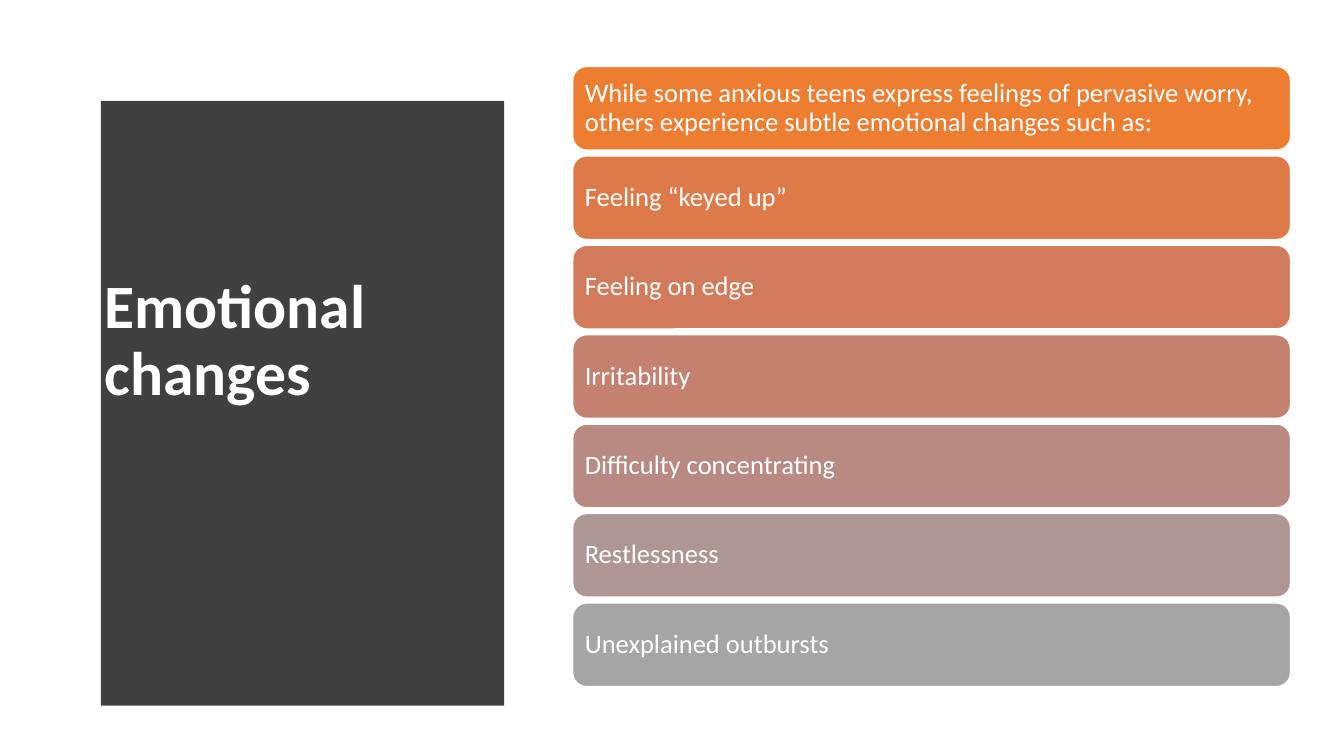
from dataclasses import dataclass

from pptx import Presentation
from pptx.dml.color import RGBColor
from pptx.enum.shapes import MSO_SHAPE as Preset
from pptx.enum.text import MSO_ANCHOR as Anchor, PP_ALIGN as Align
from pptx.slide import Slide
from pptx.text.text import TextFrame
from pptx.util import Inches, Pt

FONT = "Calibri"
WHITE = "FFFFFF"
DARK = "404040"

PANEL_LEFT, PANEL_TOP, PANEL_BOTTOM = 0.53, 0.52, 6.96
PANEL_CORNER, PANEL_BULGE = 5.08, 0.24
CURVE_STEPS = 48

BAR_LEFT, BAR_TOP, BAR_WIDTH, BAR_HEIGHT = 5.68, 0.66, 7.12, 0.83
BAR_PITCH = 0.887
BAR_INSET = 0.12


@dataclass(frozen=True)
class Bar:
    text: str
    fill: str


BARS = [
    Bar("While some anxious teens express feelings of pervasive worry, "
        "others experience subtle emotional changes such as:", "ED7D31"),
    Bar("Feeling “keyed up”", "DE7A47"),
    Bar("Feeling on edge", "D17B5C"),
    Bar("Irritability", "C48170"),
    Bar("Difficulty concentrating", "B98A82"),
    Bar("Restlessness", "AE9694"),
    Bar("Unexplained outbursts", "A5A5A5"),
]


def color(value: str) -> RGBColor:
    return RGBColor.from_string(value)


def write(frame: TextFrame, text: str, size: float, bold: bool = False) -> None:
    """Set white, left-aligned, vertically centred text that wraps."""
    frame.text = text
    frame.word_wrap = True
    frame.vertical_anchor = Anchor.MIDDLE
    para = frame.paragraphs[0]
    para.alignment = Align.LEFT
    para.line_spacing = 0.9
    font = para.runs[0].font
    font.name, font.size, font.bold = FONT, Pt(size), bold
    font.color.rgb = color(WHITE)


def add_panel(page: Slide) -> None:
    """Draw the dark panel, whose right side bulges outwards."""
    half = (PANEL_BOTTOM - PANEL_TOP) / 2
    offsets = [2 * step / CURVE_STEPS - 1 for step in range(CURVE_STEPS + 1)]
    curve = [(PANEL_CORNER + PANEL_BULGE * (1 - abs(offset) ** 2.2),
              PANEL_TOP + half * (1 + offset)) for offset in offsets]
    builder = page.shapes.build_freeform(PANEL_LEFT, PANEL_TOP, scale=Inches(1))
    builder.add_line_segments(curve + [(PANEL_LEFT, PANEL_BOTTOM)], close=True)
    panel = builder.convert_to_shape()
    panel.shadow.inherit = False
    panel.fill.solid()
    panel.fill.fore_color.rgb = color(DARK)
    panel.line.fill.background()


def add_title(page: Slide) -> None:
    box = page.shapes.add_textbox(Inches(0.94), Inches(1.11), Inches(3.74), Inches(5.24))
    write(box.text_frame, "Emotional changes", 44, bold=True)
    box.text_frame.margin_bottom = Inches(0.72)  # lifts the title above the middle


def add_bar(page: Slide, bar: Bar, top: float) -> None:
    box = page.shapes.add_shape(Preset.ROUNDED_RECTANGLE, Inches(BAR_LEFT), Inches(top),
                                Inches(BAR_WIDTH), Inches(BAR_HEIGHT))
    box.shadow.inherit = False
    box.fill.solid()
    box.fill.fore_color.rgb = color(bar.fill)
    box.line.color.rgb = color(WHITE)
    box.line.width = Pt(1)
    frame = box.text_frame
    write(frame, bar.text, 19)
    # The rounded corners already add a small inset of their own.
    frame.margin_left = frame.margin_right = Inches(BAR_INSET - 0.04)
    frame.margin_top = frame.margin_bottom = Inches(0.05)


def main() -> None:
    deck = Presentation()
    deck.slide_width, deck.slide_height = Inches(13.33), Inches(7.5)
    page = deck.slides.add_slide(deck.slide_layouts[6])
    add_panel(page)
    add_title(page)
    for index, bar in enumerate(BARS):
        add_bar(page, bar, BAR_TOP + index * BAR_PITCH)
    deck.save("out.pptx")


if __name__ == "__main__":
    main()
